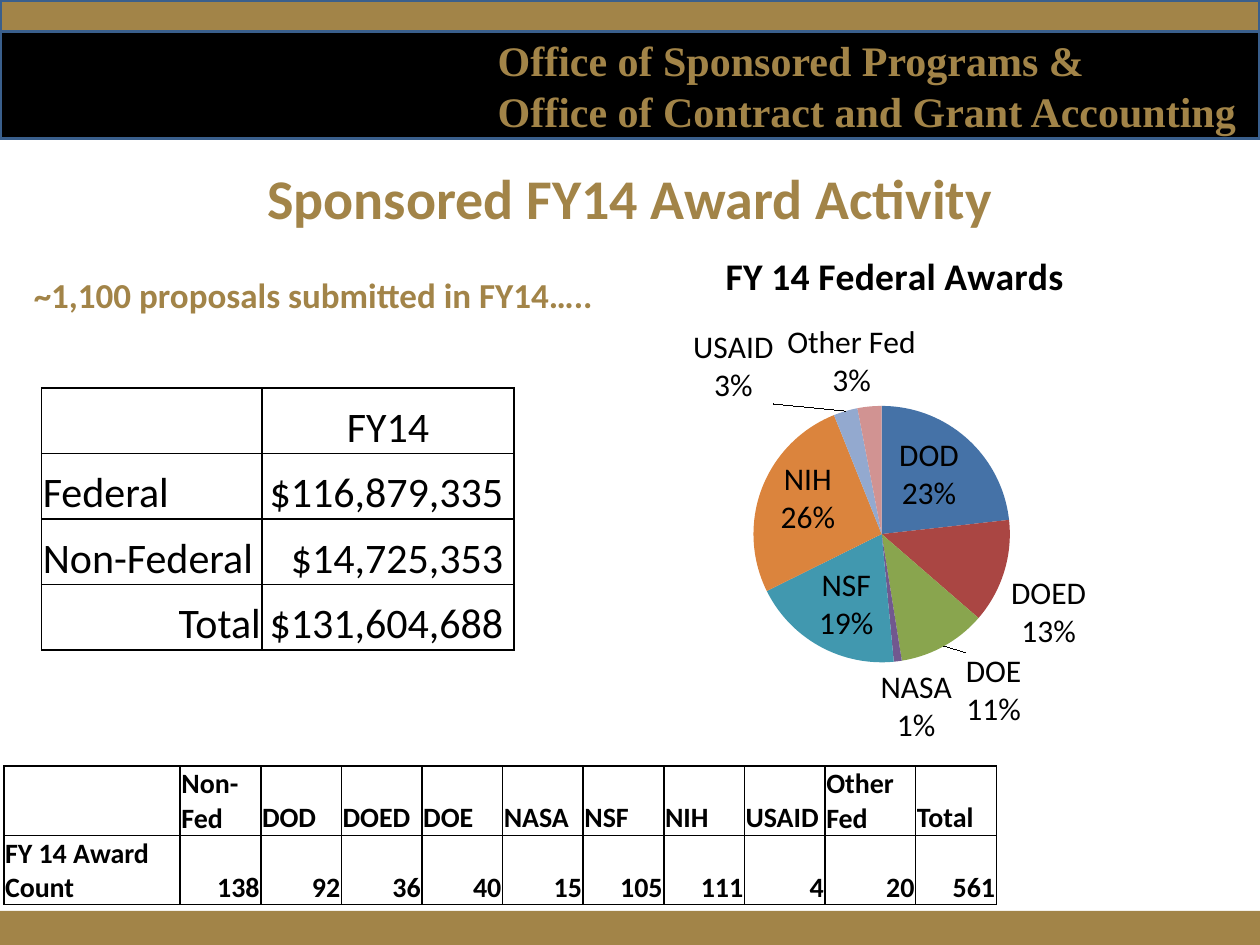
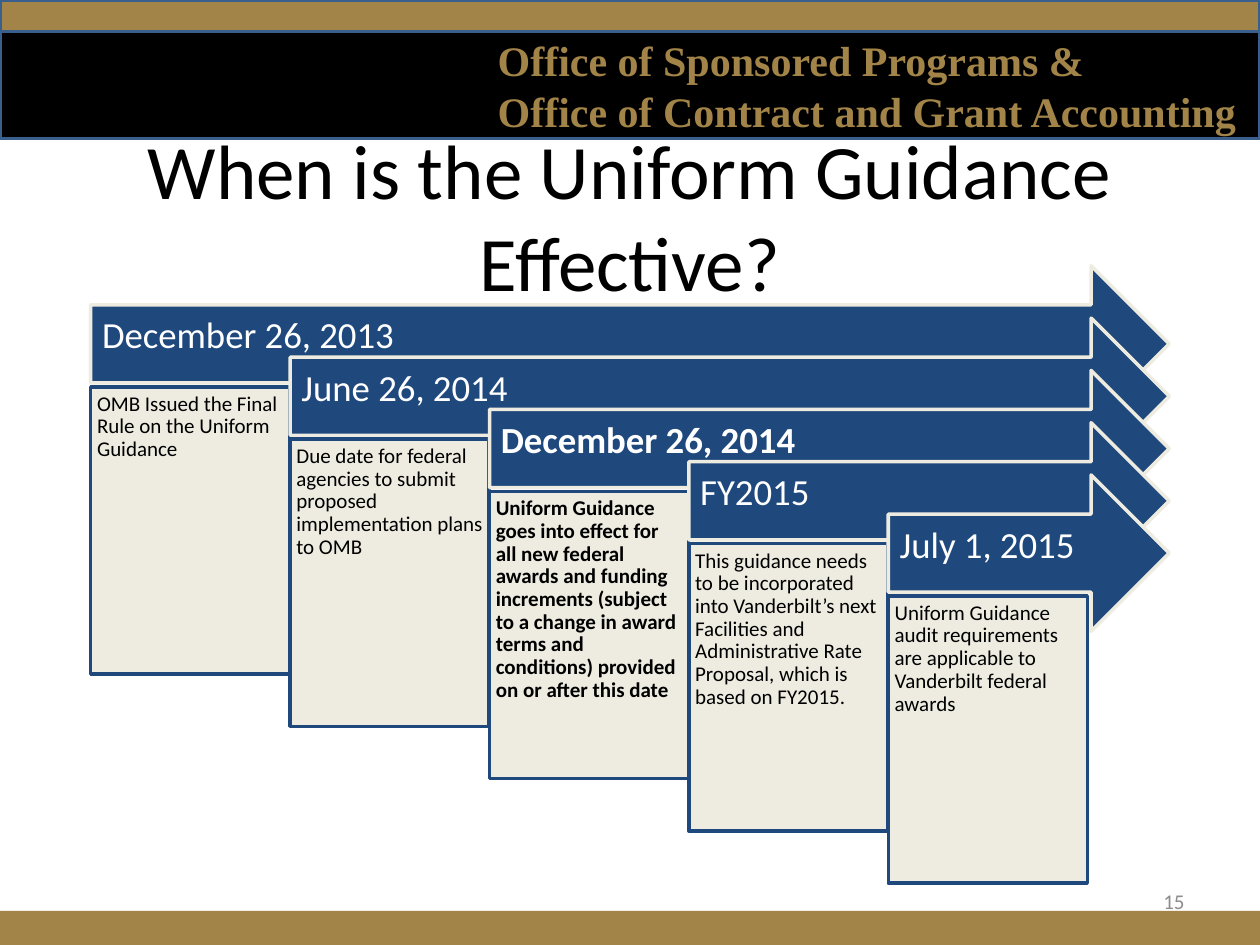
"""Build two slides on sponsored awards and the Uniform Guidance timeline."""
from lxml import etree
from pptx import Presentation
from pptx.chart.data import CategoryChartData
from pptx.dml.color import RGBColor
from pptx.enum import chart as charts, shapes, text
from pptx.oxml.ns import qn
from pptx.util import Inches, Pt

COLORS = {
    "gold": "A28448", "black": "000000", "white": "FFFFFF", "band_line": "3A5F8C",
    "navy": "1F497D", "cream": "EEECE1", "gray": "8C8C8C",
}
SANS, SERIF = "Calibri", "Times New Roman"
LEFT, CENTER, RIGHT = text.PP_ALIGN.LEFT, text.PP_ALIGN.CENTER, text.PP_ALIGN.RIGHT
TOP, MIDDLE = text.MSO_ANCHOR.TOP, text.MSO_ANCHOR.MIDDLE

OFFICES = ["Office of Sponsored Programs &", "Office of Contract and Grant Accounting"]

AWARD_SHARES = [
    ("DOD", 23, "4572A7"), ("DOED", 13, "AA4643"), ("DOE", 11, "89A54E"),
    ("NASA", 1, "71588F"), ("NSF", 19, "4198AF"), ("NIH", 26, "DB843D"),
    ("USAID", 3, "93A9CF"), ("Other Fed", 3, "D19392"),
]
AMOUNTS = [
    [("", LEFT), ("FY14", CENTER)],
    [("Federal", LEFT), ("$116,879,335 ", RIGHT)],
    [("Non-Federal", LEFT), ("$14,725,353 ", RIGHT)],
    [("Total", RIGHT), ("$131,604,688 ", RIGHT)],
]
COUNTS = [
    ("", "FY 14 Award Count"), ("Non-Fed", "138"), ("DOD", "92"), ("DOED", "36"),
    ("DOE", "40"), ("NASA", "15"), ("NSF", "105"), ("NIH", "111"), ("USAID", "4"),
    ("Other Fed", "20"), ("Total", "561"),
]

MILESTONES = [
    ("December 26, 2013", "OMB Issued the Final Rule on the Uniform Guidance", False),
    ("June 26, 2014", "Due date for federal agencies to submit proposed "
     "implementation plans to OMB", False),
    ("December 26, 2014", "Uniform Guidance goes into effect for all new federal awards "
     "and funding increments (subject to a change in award terms and conditions) "
     "provided on or after this date", True),
    ("FY2015", "This guidance needs to be incorporated into Vanderbilt’s next Facilities "
     "and Administrative Rate Proposal, which is based on FY2015.", False),
    ("July 1, 2015", "Uniform Guidance audit requirements are applicable to Vanderbilt "
     "federal awards", False),
]
FIRST_ARROW, LAST_ARROW, ARROW_TIP = (0.72, 2.11), (7.05, 3.77), 9.28


def rgb(name):
    return RGBColor.from_string(COLORS.get(name, name))


def style(font, size, color="black", bold=False, face=SANS):
    font.size, font.bold, font.name = Pt(size), bold, face
    font.color.rgb = rgb(color)


def write(shape, lines, size, color="black", bold=False, face=SANS, align=LEFT,
          anchor=TOP, insets=(0.1, 0.05, 0.1, 0.05), spacing=None):
    frame = shape.text_frame
    frame.word_wrap, frame.vertical_anchor = True, anchor
    (frame.margin_left, frame.margin_top,
     frame.margin_right, frame.margin_bottom) = map(Inches, insets)
    frame.text = "\n".join(lines)
    for para in frame.paragraphs:
        para.alignment, para.line_spacing = align, spacing
        for span in para.runs:
            style(span.font, size, color, bold, face)


def add_text(slide, area, lines, size, **options):
    box = slide.shapes.add_textbox(*map(Inches, area))
    write(box, lines, size, **options)


def add_block(slide, area, fill, line=None, kind=shapes.MSO_SHAPE.RECTANGLE):
    block = slide.shapes.add_shape(kind, *map(Inches, area))
    block.shadow.inherit = False
    block.fill.solid()
    block.fill.fore_color.rgb = rgb(fill)
    if line:
        block.line.color.rgb = rgb(line)
        block.line.width = Pt(2)
    else:
        block.line.fill.background()
    return block


def add_framed_slide(deck, title, title_area, size, **options):
    slide = deck.slides.add_slide(deck.slide_layouts[6])
    add_block(slide, (0, 0.25, 10, 0.85), "black", "band_line")
    add_text(slide, (3.75, 0.22, 6.25, 0.91), OFFICES, 24, color="gold", bold=True,
             face=SERIF, anchor=MIDDLE, insets=(0.2, 0.05, 0, 0.05))
    add_block(slide, (0, 0, 10, 0.25), "gold", "band_line")
    add_block(slide, (0, 7.23, 10, 0.27), "gold")
    add_text(slide, title_area, [title], size, align=CENTER, **options)
    return slide


def add_borders(cell):
    properties = cell._tc.get_or_add_tcPr()
    for side in ("a:lnL", "a:lnR", "a:lnT", "a:lnB"):
        line = etree.SubElement(properties, qn(side), w=str(Pt(1)))
        fill = etree.SubElement(line, qn("a:solidFill"))
        etree.SubElement(fill, qn("a:srgbClr"), val=COLORS["black"])


def add_grid(slide, origin, widths, height, rows, size, bold=False):
    area = (*origin, sum(widths), height * len(rows))
    table = slide.shapes.add_table(len(rows), len(widths), *map(Inches, area)).table
    for column, width in zip(table.columns, widths):
        column.width = Inches(width)
    for row, entries in zip(table.rows, rows):
        row.height = Inches(height)
        for cell, (words, align) in zip(row.cells, entries):
            add_borders(cell)
            cell.fill.solid()
            cell.fill.fore_color.rgb = rgb("white")
            cell.vertical_anchor = text.MSO_ANCHOR.BOTTOM
            cell.margin_left = cell.margin_top = cell.margin_right = Inches(0.01)
            cell.margin_bottom = 0
            cell.text = words
            para = cell.text_frame.paragraphs[0]
            para.alignment = align
            style(para.font, size, bold=bold)
            for span in para.runs:
                style(span.font, size, bold=bold)


def place(parent, index, **fractions):
    for old in parent.findall(qn("c:layout")):
        parent.remove(old)
    layout = etree.Element(qn("c:layout"))
    manual = etree.SubElement(layout, qn("c:manualLayout"))
    if "w" in fractions:
        etree.SubElement(manual, qn("c:layoutTarget"), val="inner")
    for axis in ("x", "y"):
        etree.SubElement(manual, qn(f"c:{axis}Mode"), val="edge")
    for key, value in fractions.items():
        etree.SubElement(manual, qn(f"c:{key}"), val=str(value))
    parent.insert(index, layout)


def add_award_pie(slide):
    names, values, colors = zip(*AWARD_SHARES)
    data = CategoryChartData()
    data.categories = names
    data.add_series("Series 1", values)
    area = map(Inches, (4.33, 1.75, 5.5, 4.33))
    chart = slide.shapes.add_chart(charts.XL_CHART_TYPE.PIE, *area, data).chart
    style(chart.font, 18)
    chart.has_legend = False
    chart.has_title = True
    frame = chart.chart_title.text_frame
    frame.text = "FY 14 Federal Awards"
    style(frame.paragraphs[0].runs[0].font, 21.5, bold=True)
    place(chart.chart_title._element, 1, x=0.25, y=0.04)
    place(chart._chartSpace.find(".//" + qn("c:plotArea")), 0, x=0.3, y=0.34, w=0.37, h=0.47)
    plot = chart.plots[0]
    plot.vary_by_categories = True
    for index, color in enumerate(colors):
        point = plot.series[0].points[index]
        point.format.fill.solid()
        point.format.fill.fore_color.rgb = rgb(color)
        point.format.line.fill.background()
    plot.has_data_labels = True
    labels = plot.data_labels
    labels.show_value = False
    labels.show_category_name = labels.show_percentage = True
    labels.position = charts.XL_LABEL_POSITION.BEST_FIT
    style(labels.font, 18)
    separator = etree.Element(qn("c:separator"))
    separator.text = "\n"
    labels._element.find(qn("c:showBubbleSize")).addnext(separator)


def build_awards(deck):
    slide = add_framed_slide(deck, "Sponsored FY14 Award Activity", (0.5, 1.25, 9, 0.58),
                             32, color="gold", bold=True)
    add_award_pie(slide)
    add_grid(slide, (0.33, 3.08), [1.75, 2], 0.52, AMOUNTS, 24)
    headings, counts = zip(*COUNTS)
    rows = [[(name, LEFT) for name in headings],
            [(count, RIGHT if count.isdigit() else LEFT) for count in counts]]
    widths = [1.4] + [0.64] * 8 + [0.72, 0.64]
    add_grid(slide, (0.03, 6.08), widths, 0.55, rows, 16, bold=True)
    add_text(slide, (0.17, 2.12, 4.83, 0.44), ["~1,100 proposals submitted in FY14….."], 20,
             color="gold", bold=True)


def build_timeline(deck):
    slide = add_framed_slide(deck, "When is the Uniform Guidance Effective?",
                             (0.5, 0.92, 9, 0.63), 44)
    last = len(MILESTONES) - 1
    for index, (date, event, bold) in enumerate(MILESTONES):
        left, top = (start + (end - start) * index / last
                     for start, end in zip(FIRST_ARROW, LAST_ARROW))
        arrow = add_block(slide, (left, top, ARROW_TIP - left, 1.24), "navy", "cream",
                          shapes.MSO_SHAPE.RIGHT_ARROW)
        write(arrow, [date], 21, color="white", bold=bold, anchor=MIDDLE,
              insets=(0.09, 0.09, 0.28, 0.2), spacing=0.9)
        card = add_block(slide, (left, top + 0.96, 1.58, 2.28), "cream", "navy")
        write(card, [event], 12, bold=bold, insets=(0.05,) * 4, spacing=0.9)
    add_text(slide, (7.17, 6.95, 2.33, 0.4), ["15"], 12, color="gray", align=RIGHT,
             anchor=MIDDLE)


def main():
    deck = Presentation()
    deck.slide_width, deck.slide_height = Inches(10), Inches(7.5)
    build_awards(deck)
    build_timeline(deck)
    deck.save("out.pptx")


if __name__ == "__main__":
    main()
